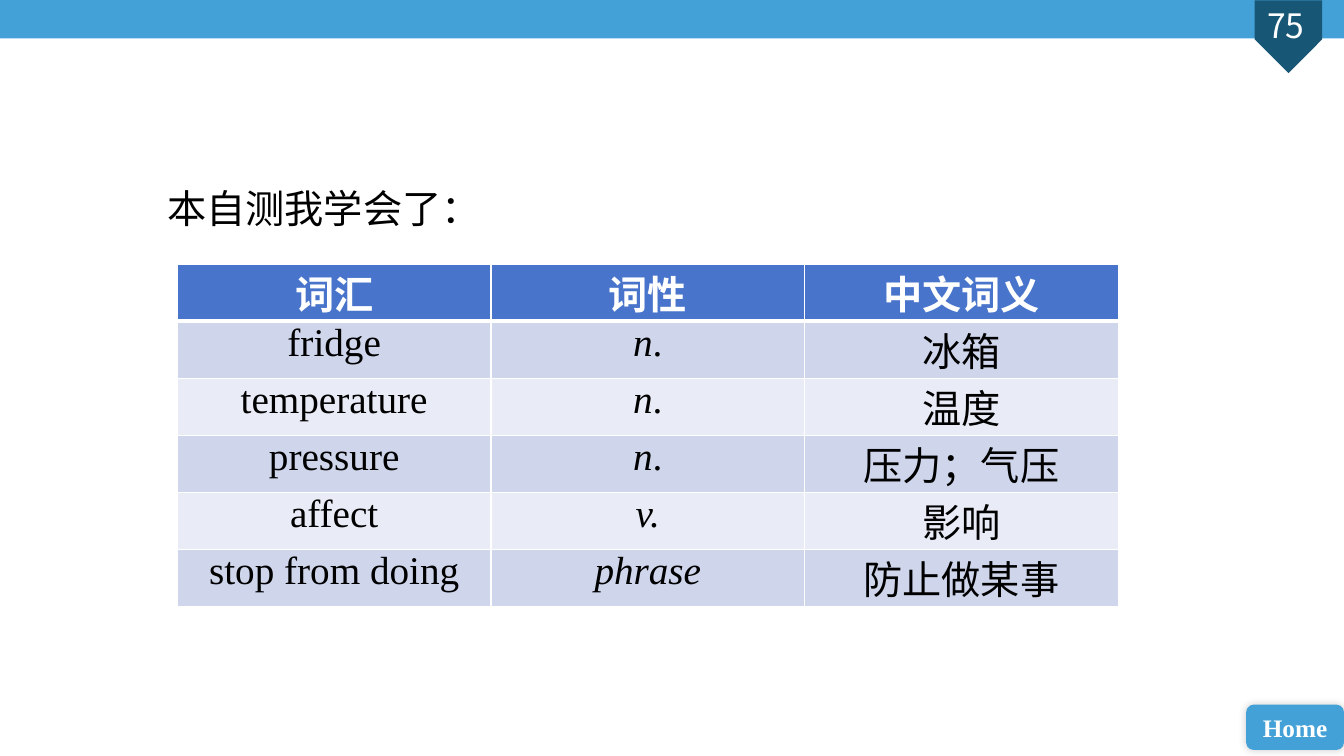
from dataclasses import dataclass
from lxml.etree import SubElement
from pptx import Presentation
from pptx.dml.color import RGBColor
from pptx.enum.shapes import MSO_SHAPE as Kind
from pptx.enum.text import MSO_ANCHOR as Anchor, MSO_AUTO_SIZE as Fit, PP_ALIGN as Align
from pptx.oxml import parse_xml
from pptx.oxml.ns import nsdecls, qn
from pptx.util import Emu, Inches, Pt

WIDE, HIGH = Inches(13.33), Inches(7.5)
SERIF, SANS = "Times New Roman", "Noto Sans CJK SC"
WHITE, BLACK, SKY, NAVY, BLUE = "FFFFFF", "000000", "43A1D8", "185675", "4874CB"
BANDS = ("CFD6EC", "E9EBF6")


@dataclass
class Box:
    left: float
    top: float
    width: float
    height: float

    def place(self) -> tuple[Emu, Emu, Emu, Emu]:
        return (Emu(int(WIDE * self.left / 100)), Emu(int(HIGH * self.top / 100)),
                Emu(int(WIDE * self.width / 100)), Emu(int(HIGH * self.height / 100)))


@dataclass
class Span:
    text: str
    size: float = 28
    font: str = SERIF
    ink: str = BLACK
    bold: bool = False
    slant: bool = False


@dataclass
class Word:
    term: str
    role: list[Span]
    sense: str


NOUN = [Span("n", slant=True), Span(".")]
WORDS = [
    Word("fridge", NOUN, "冰箱"),
    Word("temperature", NOUN, "温度"),
    Word("pressure", NOUN, "压力；气压"),
    Word("affect", [Span("v.", slant=True)], "影响"),
    Word("stop from doing", [Span("phrase", slant=True)], "防止做某事"),
]
HEADS = ("词汇", "词性", "中文词义")


def tint(code: str) -> RGBColor:
    return RGBColor.from_string(code)


def write(frame, spans: list[Span], align: Align = Align.CENTER) -> None:
    para = frame.paragraphs[0]
    para.alignment = align
    for span in spans:
        run = para.add_run()
        run.text = span.text
        font = run.font
        font.size, font.name = Pt(span.size), span.font
        font.bold, font.italic = span.bold, span.slant
        font.color.rgb = tint(span.ink)
        SubElement(run._r.get_or_add_rPr(), qn("a:ea"), typeface=SANS)


def draw(slide, kind: Kind, box: Box, fill: str):
    shape = slide.shapes.add_shape(kind, *box.place())
    shape.shadow.inherit = False
    shape.fill.solid()
    shape.fill.fore_color.rgb = tint(fill)
    shape.line.fill.background()
    return shape


def glow(shape) -> None:
    effects = shape._element.spPr.find(qn("a:effectLst"))
    effects.append(parse_xml(
        f'<a:outerShdw {nsdecls("a")} blurRad="{Pt(6)}" dist="0" dir="18900000">'
        f'<a:srgbClr val="{BLACK}"><a:alpha val="20000"/></a:srgbClr></a:outerShdw>'))


def edge(cell, top: float, base: float) -> None:
    sides = (("lnL", 1), ("lnR", 1), ("lnT", top), ("lnB", base))
    for spot, (side, width) in enumerate(sides):
        cell._tc.get_or_add_tcPr().insert(spot, parse_xml(
            f'<a:{side} {nsdecls("a")} w="{Pt(width)}"><a:solidFill>'
            f'<a:srgbClr val="{WHITE}"/></a:solidFill></a:{side}>'))


def fill_grid(slide, box: Box) -> None:
    rows = [[[Span(head, ink=WHITE, bold=True)] for head in HEADS]]
    rows += [[[Span(word.term)], word.role, [Span(word.sense)]] for word in WORDS]
    grid = slide.shapes.add_table(len(rows), len(HEADS), *box.place()).table
    for row, items in enumerate(rows):
        for col, spans in enumerate(items):
            cell = grid.cell(row, col)
            cell.margin_top = cell.margin_bottom = 0
            cell.vertical_anchor = Anchor.TOP
            cell.fill.solid()
            cell.fill.fore_color.rgb = tint(BANDS[(row - 1) % 2] if row else BLUE)
            edge(cell, 3 if row == 1 else 1, 1 if row else 3)
            write(cell.text_frame, spans)


def main() -> None:
    deck = Presentation()
    deck.slide_width, deck.slide_height = WIDE, HIGH
    slide = deck.slides.add_slide(deck.slide_layouts[5])

    draw(slide, Kind.RECTANGLE, Box(0, 0, 100, 5.07), SKY)
    flag = draw(slide, Kind.PENTAGON, Box(93.17, 0.4, 5.4, 8.93), NAVY)
    flag.rotation = 90
    page = slide.shapes.add_textbox(*Box(92.2, 0, 7.35, 6.67).place())
    page.text_frame.word_wrap = True
    write(page.text_frame, [Span("75", 24, SANS, WHITE), Span(" ", 18, SANS, WHITE)])

    home = draw(slide, Kind.ROUNDED_RECTANGLE, Box(92.72, 93.2, 7.28, 6), SKY)
    glow(home)
    home.text_frame.vertical_anchor = Anchor.MIDDLE
    write(home.text_frame, [Span("Home", 18, ink=WHITE, bold=True)])

    fill_grid(slide, Box(13.2, 34.93, 70, 45.33))

    title = slide.shapes.title
    title.left, title.top, title.width, title.height = Box(11.7, 23.73, 29.03, 7.6).place()
    frame = title.text_frame
    frame.word_wrap, frame.auto_size = True, Fit.NONE
    frame.vertical_anchor = Anchor.TOP
    write(frame, [Span("本自测我学会了：", font="Calibri")], Align.LEFT)

    deck.save("out.pptx")


if __name__ == "__main__":
    main()
